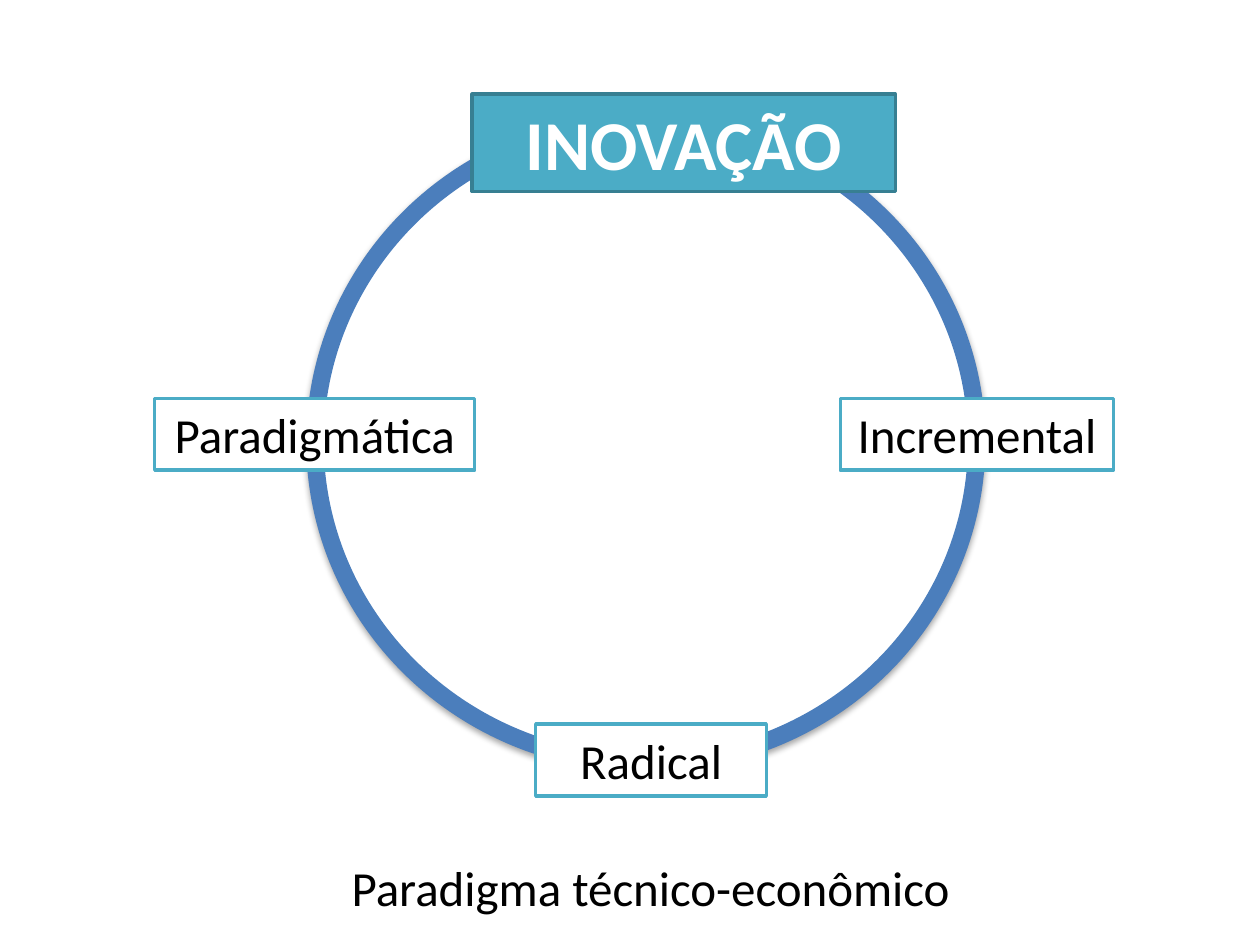
from lxml import etree
from pptx import Presentation
from pptx import util as u
from pptx.dml.color import RGBColor
from pptx.enum import shapes, text
from pptx.oxml import ns

COLOURS = {"white": "FFFFFF", "black": "000000", "ring": "4B7EBC",
           "teal": "4BACC6", "dark teal": "377F92"}

# Boxes are left, top, width, height in centimetres.
RING = (6.35, 2.44, 13.34, 12.95)
TITLE = ("INOVAÇÃO", (9.52, 1.9, 8.53, 1.96))
CAPTION = ("Paradigma técnico-econômico", (6.55, 17.15, 13.13, 1.45))
LABEL_HEIGHT = 1.45
LABELS = [  # text, left, top, width
    ("Incremental", 16.94, 8.03, 5.51),
    ("Radical", 10.8, 14.6, 4.65),
    ("Paradigmática", 3.12, 8.03, 6.45),
]

TITLE_FONT = {"name": "Calibri", "size": u.Pt(40), "bold": True}
LABEL_FONT = {"name": "Calibri", "size": u.Pt(28), "bold": False}
FRAME = {"word_wrap": True, "auto_size": text.MSO_AUTO_SIZE.NONE,
         "vertical_anchor": text.MSO_ANCHOR.MIDDLE,
         "margin_left": u.Cm(0.25), "margin_right": u.Cm(0.25),
         "margin_top": u.Cm(0.13), "margin_bottom": u.Cm(0.13)}


def colour(name):
    return RGBColor.from_string(COLOURS[name])


def set_attributes(target, values):
    for name, value in values.items():
        setattr(target, name, value)


def place(shape, box):
    names = ("left", "top", "width", "height")
    set_attributes(shape, dict(zip(names, map(u.Cm, box))))


def paint(shape, fill, line, line_width):
    shape.fill.solid()
    shape.fill.fore_color.rgb = colour(fill)
    shape.line.color.rgb = colour(line)
    shape.line.width = u.Pt(line_width)


def write(shape, words, font, font_colour):
    frame = shape.text_frame
    set_attributes(frame, FRAME)
    paragraph = frame.paragraphs[0]
    paragraph.alignment = text.PP_ALIGN.CENTER
    run = paragraph.add_run()
    run.text = words
    set_attributes(run.font, font)
    run.font.color.rgb = colour(font_colour)


def add_shape(slide, kind, box):
    shape = slide.shapes.add_shape(kind, *map(u.Cm, box))
    shape.shadow.inherit = False
    return shape


def add_soft_shadow(shape):
    effects = shape.element.spPr.find(ns.qn("a:effectLst"))
    shadow = etree.SubElement(effects, ns.qn("a:outerShdw"), blurRad="40000",
                              dist="23000", dir="5400000", rotWithShape="0")
    shade = etree.SubElement(shadow, ns.qn("a:srgbClr"), val=COLOURS["black"])
    etree.SubElement(shade, ns.qn("a:alpha"), val="35000")


def main():
    presentation = Presentation()
    presentation.slide_width = u.Cm(25.4)
    presentation.slide_height = u.Cm(19.05)
    slide = presentation.slides.add_slide(presentation.slide_layouts[5])

    ring = add_shape(slide, shapes.MSO_SHAPE.OVAL, RING)
    paint(ring, "white", "ring", 10)
    add_soft_shadow(ring)

    title = slide.shapes.title
    words, box = TITLE
    place(title, box)
    paint(title, "teal", "dark teal", 2)
    write(title, words, TITLE_FONT, "white")
    ring.element.addnext(title.element)  # the title lies over the ring

    words, box = CAPTION
    caption = slide.shapes.add_textbox(*map(u.Cm, box))
    write(caption, words, LABEL_FONT, "black")

    for words, left, top, width in LABELS:
        label = add_shape(slide, shapes.MSO_SHAPE.RECTANGLE,
                          (left, top, width, LABEL_HEIGHT))
        paint(label, "white", "teal", 2)
        write(label, words, LABEL_FONT, "black")

    presentation.save("out.pptx")


if __name__ == "__main__":
    main()
